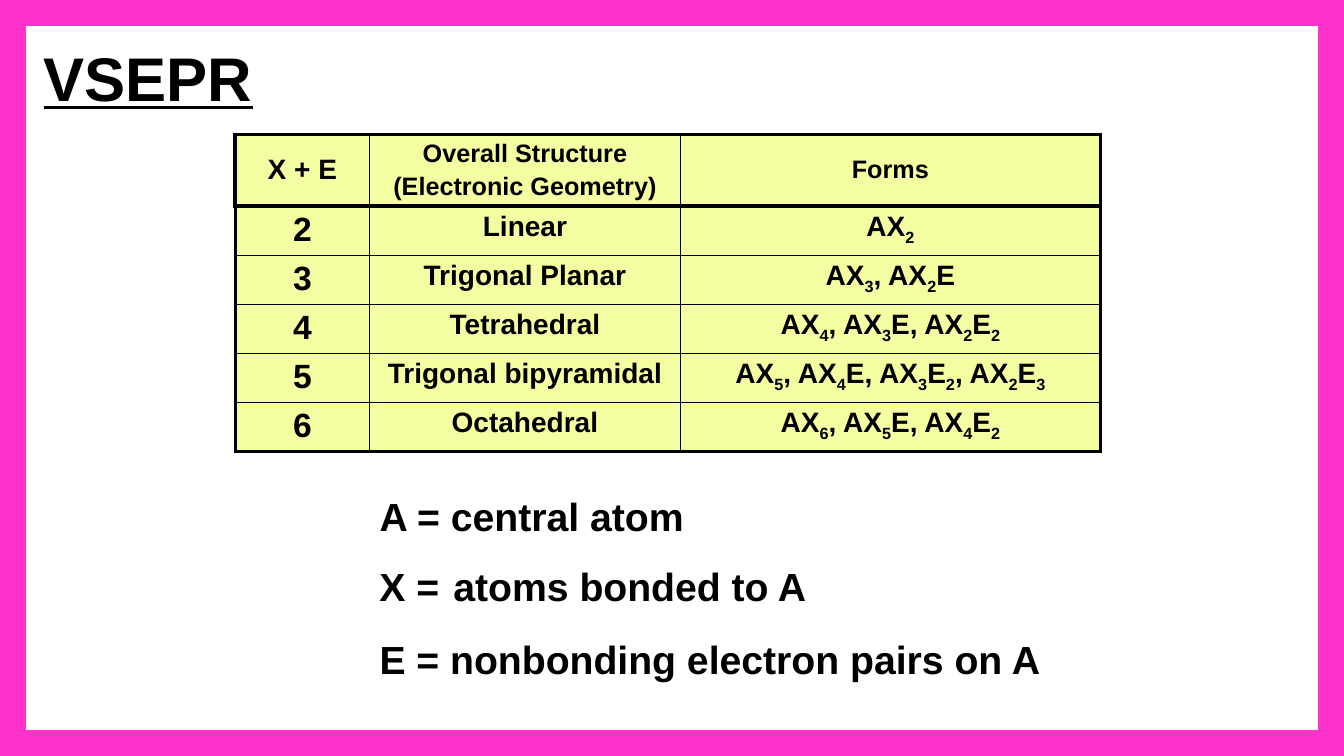
"""Build the VSEPR slide: electron geometry table, symbol legend and coloured frame."""
import itertools

import lxml.etree
import pptx
import pptx.dml.color
import pptx.enum.shapes
import pptx.enum.text
import pptx.oxml.ns
import pptx.util

COLORS = {"ink": "000000", "table": "F4FDA1", "frame": "FF33CC"}
GRID_COLUMNS, GRID_ROWS = 160, 90
CENTER = pptx.enum.text.PP_ALIGN.CENTER
LEFT = pptx.enum.text.PP_ALIGN.LEFT
MIDDLE = pptx.enum.text.MSO_ANCHOR.MIDDLE
TOP = pptx.enum.text.MSO_ANCHOR.TOP

presentation = pptx.Presentation()
presentation.slide_width = pptx.util.Inches(13.333)
presentation.slide_height = pptx.util.Inches(7.5)
unit = presentation.slide_height / GRID_ROWS
slide = presentation.slides.add_slide(presentation.slide_layouts[5])


def grid(*steps):
    return [int(step * unit) for step in steps]


def write(paragraph, text, *, size, align=LEFT, underline=None, subscripts=False):
    paragraph.alignment = align
    pieces = [(False, text)]
    if subscripts:
        pieces = [(low, "".join(part)) for low, part in itertools.groupby(text, str.isdigit)]
    for lowered, piece in pieces:
        run = paragraph.add_run()
        run.text = piece
        run.font.name = "Arial"
        run.font.size = pptx.util.Pt(size)
        run.font.bold = True
        run.font.underline = underline
        run.font.color.rgb = pptx.dml.color.RGBColor.from_string(COLORS["ink"])
        if lowered:
            run.font._element.set("baseline", "-25000")


title = slide.shapes.title
title.left, title.top, title.width, title.height = grid(4, 3.75, 101, 10.7)
title.text_frame.vertical_anchor = MIDDLE
write(title.text_frame.paragraphs[0], "VSEPR", size=44, underline=True)

geometries = [
    ("X + E", "Overall Structure\n(Electronic Geometry)", "Forms"),
    ("2", "Linear", "AX2"),
    ("3", "Trigonal Planar", "AX3, AX2E"),
    ("4", "Tetrahedral", "AX4, AX3E, AX2E2"),
    ("5", "Trigonal bipyramidal", "AX5, AX4E, AX3E2, AX2E3"),
    ("6", "Octahedral", "AX6, AX5E, AX4E2"),
]
column_spans = (16, 37, 50)
row_spans = [8.5] + [5.85] * 5
header_sizes, body_sizes = (20, 18, 18), (24, 20, 20)
last_row, last_column = len(row_spans) - 1, len(column_spans) - 1

geometry_table = slide.shapes.add_table(
    len(row_spans), len(column_spans), *grid(28, 16, sum(column_spans), sum(row_spans))
).table
geometry_table.first_row = False
geometry_table.horz_banding = False
for column, span in zip(geometry_table.columns, grid(*column_spans)):
    column.width = span
for row, span in zip(geometry_table.rows, grid(*row_spans)):
    row.height = span

for r, entries in enumerate(geometries):
    is_header = r == 0
    outer = 3 if is_header else 2.25
    for c, entry in enumerate(entries):
        cell = geometry_table.cell(r, c)
        cell.vertical_anchor = MIDDLE if is_header else TOP
        borders = {
            "a:lnL": outer if c == 0 else 1,
            "a:lnR": outer if c == last_column else 1,
            "a:lnT": 3 if r <= 1 else 1,
            "a:lnB": 3 if is_header else 2.25 if r == last_row else 1,
        }
        properties = cell._tc.get_or_add_tcPr()
        for side, points in borders.items():
            border = lxml.etree.SubElement(
                properties, pptx.oxml.ns.qn(side), w=str(pptx.util.Pt(points))
            )
            ink = lxml.etree.SubElement(border, pptx.oxml.ns.qn("a:solidFill"))
            lxml.etree.SubElement(ink, pptx.oxml.ns.qn("a:srgbClr"), val=COLORS["ink"])
        cell.fill.solid()
        cell.fill.fore_color.rgb = pptx.dml.color.RGBColor.from_string(COLORS["table"])
        size = (header_sizes if is_header else body_sizes)[c]
        for i, line in enumerate(entry.split("\n")):
            paragraph = cell.text_frame.paragraphs[0]
            if i:
                paragraph = cell.text_frame.add_paragraph()
                paragraph.space_before = pptx.util.Pt(size * 0.2)
            write(paragraph, line, size=size, align=CENTER, subscripts=c == last_column)

legend = [
    (58, 39, 6.8, [("A = central atom", 28)]),
    (65, 54, 8.5, [("X =", 28), (" ", 36), ("atoms bonded to A", 28)]),
    (75, 82, 6.8, [("E = nonbonding electron pairs on A", 28)]),
]
for top, width, height, phrases in legend:
    definition = slide.shapes.add_textbox(*grid(44, top, width, height)).text_frame
    definition.word_wrap = False
    definition.auto_size = pptx.enum.text.MSO_AUTO_SIZE.SHAPE_TO_FIT_TEXT
    for phrase, size in phrases:
        write(definition.paragraphs[0], phrase, size=size)

frame = slide.shapes.add_shape(
    pptx.enum.shapes.MSO_SHAPE.FRAME, *grid(0, 0, GRID_COLUMNS, GRID_ROWS)
)
frame.adjustments[0] = 0.032
frame.shadow.inherit = False
frame.fill.solid()
frame.fill.fore_color.rgb = pptx.dml.color.RGBColor.from_string(COLORS["frame"])
frame.line.color.rgb = pptx.dml.color.RGBColor.from_string(COLORS["frame"])
frame.line.width = pptx.util.Pt(2)

presentation.save("out.pptx")
